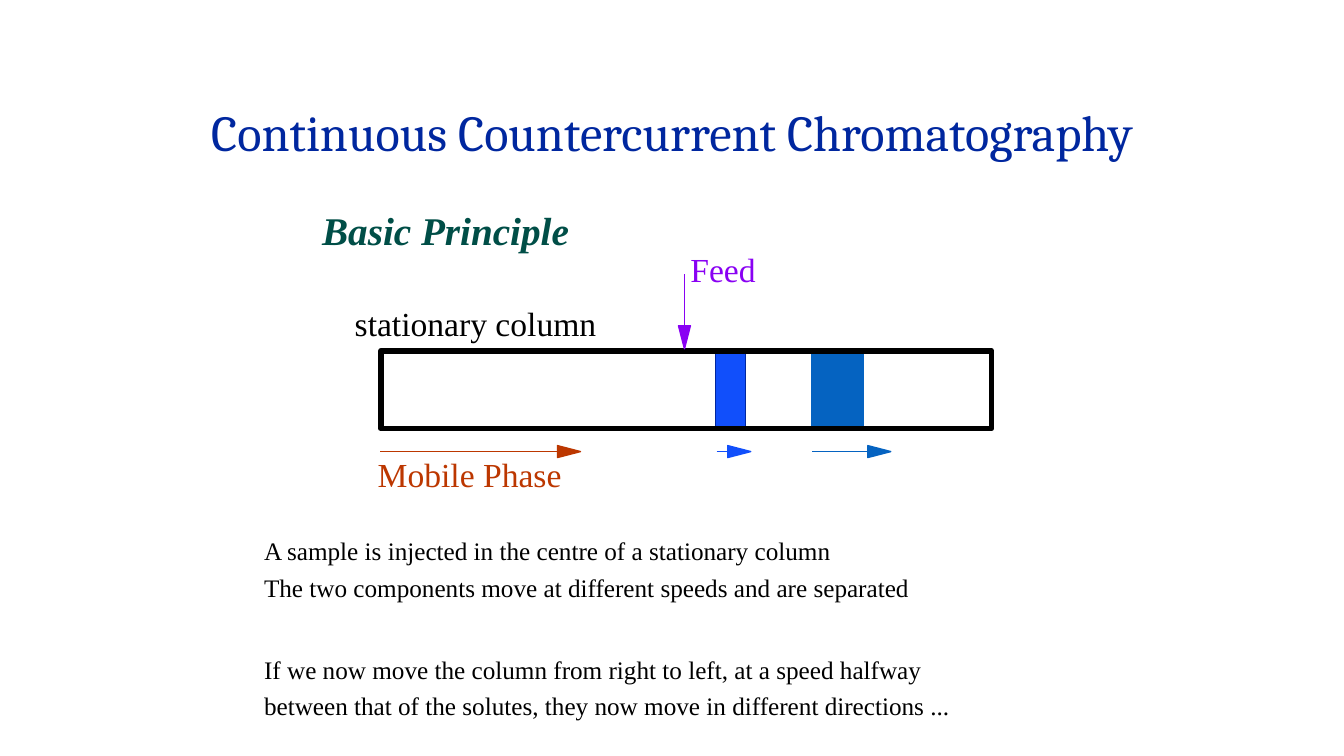
"""Build the slide on the principle of continuous countercurrent chromatography."""
from pptx import Presentation
from pptx.dml.color import RGBColor
from pptx.enum import shapes, text
from pptx.oxml.ns import qn
from pptx.util import Cm, Pt
from lxml import etree

NAVY = RGBColor(0x00, 0x27, 0x9F)
GREEN = RGBColor(0x00, 0x4E, 0x47)
VIOLET = RGBColor(0x89, 0x01, 0xF3)
RUST = RGBColor(0xBC, 0x37, 0x00)
BLUE = RGBColor(0x11, 0x4F, 0xFB)
AZURE = RGBColor(0x05, 0x63, 0xC1)
BLACK = RGBColor(0x00, 0x00, 0x00)
SERIF = "Times New Roman"
HEAD_LENGTH, HEAD_HALF = 0.58, 0.15


def style(p, size, color, name=SERIF):
    p.line_spacing = 0.9
    p.font.size = Pt(size)
    p.font.name = name
    p.font.color.rgb = color


def arrow(x1, y1, x2, y2, color):
    length = abs(x2 - x1) + abs(y2 - y1)
    dx, dy = (x2 - x1) / length, (y2 - y1) / length
    bx, by = x2 - HEAD_LENGTH * dx, y2 - HEAD_LENGTH * dy
    line = s.shapes.add_connector(
        shapes.MSO_CONNECTOR.STRAIGHT, Cm(x1), Cm(y1), Cm(bx), Cm(by))
    etree.SubElement(line._element.spPr, qn("a:effectLst"))
    wx, wy = HEAD_HALF * dy, HEAD_HALF * dx
    fb = s.shapes.build_freeform(Cm(x2), Cm(y2))
    fb.add_line_segments([(Cm(bx + wx), Cm(by - wy)), (Cm(bx - wx), Cm(by + wy))])
    head = fb.convert_to_shape()
    head.shadow.inherit = False
    head.fill.solid()
    head.fill.fore_color.rgb = color
    for sp in (line, head):
        sp.line.color.rgb = color
        sp.line.width = Pt(1)


prs = Presentation()
prs.slide_width, prs.slide_height = Cm(33.87), Cm(19.05)
s = prs.slides.add_slide(prs.slide_layouts[1])

title, body = s.shapes.title, s.placeholders[1]
title.left, title.top, title.width, title.height = Cm(3.23), Cm(2.59), Cm(27.41), Cm(1.68)
body.left, body.top, body.width, body.height = Cm(6.4), Cm(13.46), Cm(20), Cm(4.75)
for sp in (title, body):
    sp.text_frame.auto_size = text.MSO_AUTO_SIZE.NONE
    sp.text_frame.vertical_anchor = text.MSO_ANCHOR.TOP

title.text_frame.text = "Continuous Countercurrent Chromatography"
p = title.text_frame.paragraphs[0]
p.alignment = text.PP_ALIGN.CENTER
style(p, 36, NAVY, "Cambria")

STEPS = [
    ("A sample is injected in the centre of a stationary column", 0),
    ("The two components move at different speeds and are separated", 6.6),
    ("If we now move the column from right to left, at a speed halfway", 39),
    ("between that of the solutes, they now move in different directions ...", 6.6),
]
tf = body.text_frame
tf.text = "\n".join(step for step, gap in STEPS)
for p, (step, gap) in zip(tf.paragraphs, STEPS):
    style(p, 18, BLACK)
    p.space_before = Pt(gap)
    pPr = p._p.get_or_add_pPr()
    pPr.set("marL", "0")
    pPr.set("indent", "0")
    pPr.insert_element_before(
        pPr.makeelement(qn("a:buNone")), "a:tabLst", "a:defRPr", "a:extLst")

for left, width, fill, edge, weight in [
    (18.03, 0.76, BLUE, NAVY, 1),
    (20.45, 1.3, AZURE, AZURE, 1),
    (9.6, 15.39, None, BLACK, 4),
]:
    sp = s.shapes.add_shape(
        shapes.MSO_SHAPE.RECTANGLE, Cm(left), Cm(8.84), Cm(width), Cm(1.96))
    sp.shadow.inherit = False
    if fill is None:
        sp.fill.background()
    else:
        sp.fill.solid()
        sp.fill.fore_color.rgb = fill
    sp.line.color.rgb = edge
    sp.line.width = Pt(weight)

arrow(17.25, 6.91, 17.25, 8.79, VIOLET)
for start, end, color in [(9.58, 14.63, RUST), (18.06, 18.92, BLUE), (20.47, 22.45, AZURE)]:
    arrow(start, 11.38, end, 11.38, color)

for label, left, top, width, height, size, color in [
    ("Basic Principle", 7.87, 5.21, 6.78, 1.32, 28, GREEN),
    ("Feed", 17.15, 6.27, 2.16, 1.17, 24, VIOLET),
    ("stationary column", 8.69, 7.62, 6.65, 1.17, 24, BLACK),
    ("Mobile Phase", 9.27, 11.43, 5.18, 1.17, 24, RUST),
]:
    tf = s.shapes.add_textbox(Cm(left), Cm(top), Cm(width), Cm(height)).text_frame
    tf.word_wrap = False
    tf.text = label
    p = tf.paragraphs[0]
    style(p, size, color)
    p.font.bold = p.font.italic = label == "Basic Principle"

prs.save("out.pptx")
